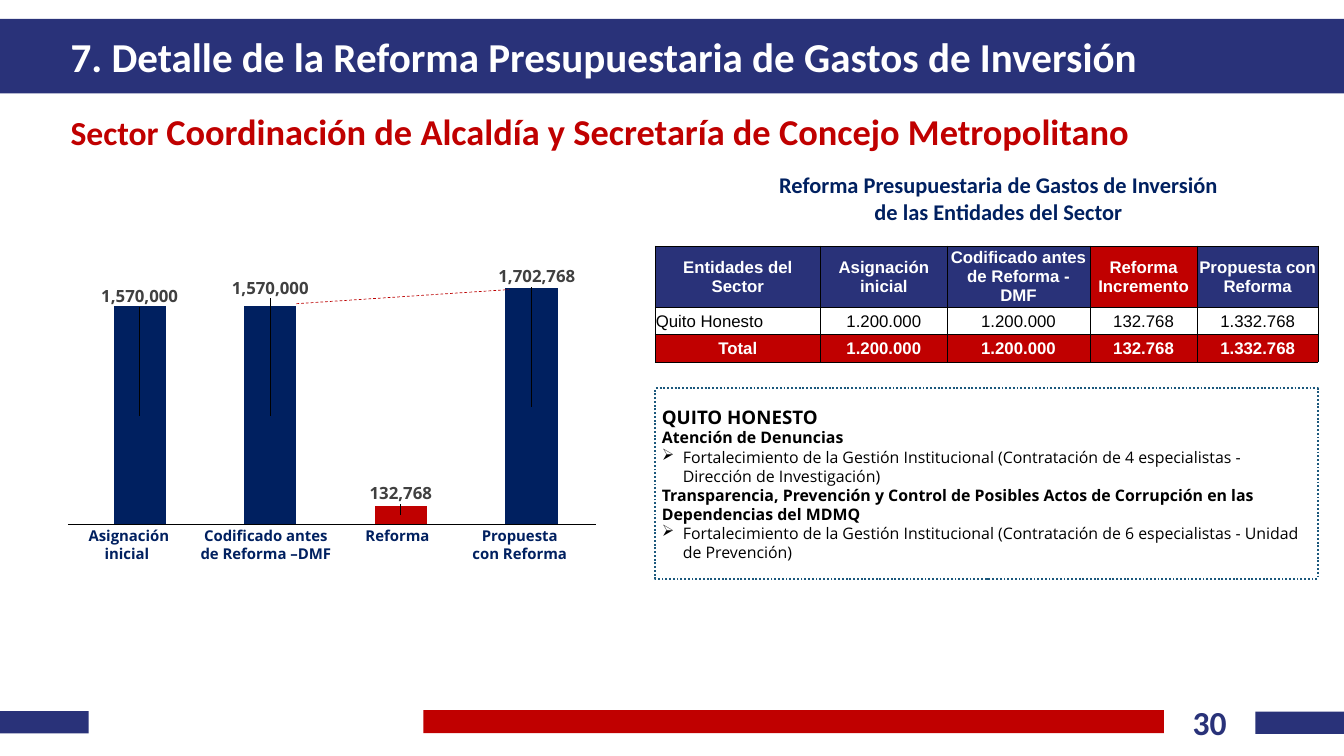
from lxml import etree
from pptx import Presentation
from pptx.chart.data import CategoryChartData
from pptx.dml.color import RGBColor
from pptx.enum.chart import XL_CHART_TYPE
from pptx.enum.dml import MSO_LINE
from pptx.enum.shapes import MSO_CONNECTOR, MSO_SHAPE
from pptx.enum.text import MSO_ANCHOR, PP_ALIGN
from pptx.oxml import parse_xml
from pptx.oxml.ns import nsdecls, qn
from pptx.util import Pt

NAVY = RGBColor(0x29, 0x32, 0x79)
DARK_BLUE = RGBColor(0x00, 0x20, 0x60)
RED = RGBColor(0xC0, 0x00, 0x00)
LINK_RED = RGBColor(0xBC, 0x00, 0x00)
TEAL = RGBColor(0x1B, 0x58, 0x7C)
GREY = RGBColor(0x40, 0x40, 0x40)
BLACK = RGBColor(0, 0, 0)
WHITE = RGBColor(0xFF, 0xFF, 0xFF)
LEFT, CENTER, JUSTIFY = PP_ALIGN.LEFT, PP_ALIGN.CENTER, PP_ALIGN.JUSTIFY
TOP, MIDDLE = MSO_ANCHOR.TOP, MSO_ANCHOR.MIDDLE
RECTANGLE, STRAIGHT = MSO_SHAPE.RECTANGLE, MSO_CONNECTOR.STRAIGHT
DASH, DOTS = MSO_LINE.DASH, MSO_LINE.ROUND_DOT


def write(para, text, size, name, color, bold=True, align=LEFT):
    para.alignment = align
    span = para.add_run()
    span.text = text
    span.font.color.rgb = color
    for key, value in {"size": Pt(size), "name": name, "bold": bold}.items():
        setattr(span.font, key, value)


def add_box(left, top, width, height, anchor=MIDDLE, side=13, edge=6.5):
    frame = page.shapes.add_textbox(Pt(left), Pt(top), Pt(width), Pt(height)).text_frame
    formats = {"word_wrap": True, "vertical_anchor": anchor,
               "margin_left": Pt(side), "margin_right": Pt(side),
               "margin_top": Pt(edge), "margin_bottom": Pt(edge)}
    for key, value in formats.items():
        setattr(frame, key, value)
    return frame


deck = Presentation()
deck.slide_width, deck.slide_height = Pt(1440), Pt(810)
page = deck.slides.add_slide(deck.slide_layouts[6])

# Title band and footer bars
for left, top, width, height, color in [
    (453.6, 761, 793.4, 24.5, RED),
    (0, 762, 95, 23.8, NAVY),
    (1345, 762.5, 95, 23.8, NAVY),
    (0, 20.2, 1440, 80, NAVY),
]:
    bar = page.shapes.add_shape(RECTANGLE, Pt(left), Pt(top), Pt(width), Pt(height))
    bar.shadow.inherit = False
    bar.fill.solid()
    bar.fill.fore_color.rgb = color
    bar.line.fill.background()

# Title, sector, page number and table heading
title = add_box(62.6, 20.2, 1278.7, 80)
write(title.paragraphs[0], "7. Detalle de la Reforma Presupuestaria de Gastos de Inversión",
      44, "Calibri", WHITE)
sector = add_box(62.6, 100, 1216.8, 81.4).paragraphs[0]
write(sector, "Sector ", 36, "Calibri", RED)
write(sector, "Coordinación de Alcaldía y Secretaría de Concejo Metropolitano", 39, "Calibri", RED)
number = add_box(1247, 748.8, 98, 51, TOP, 7.2, 3.6)
write(number.paragraphs[0], "30", 36, "Calibri", NAVY, align=CENTER)
heading = add_box(728, 182.2, 683.3, 60.5)
for index, text in enumerate(["Reforma Presupuestaria de Gastos de Inversión",
                              "de las Entidades del Sector"]):
    para = heading.add_paragraph() if index else heading.paragraphs[0]
    write(para, text, 24, "Calibri", DARK_BLUE, align=CENTER)

# Budget chart
amounts = [1570000, 1570000, 132768, 1702768]
data = CategoryChartData(number_format="#,##0")
data.categories = ["1", "2", "3", "4"]
data.add_series("Series 1", amounts)
chart = page.shapes.add_chart(XL_CHART_TYPE.COLUMN_STACKED, Pt(69.8), Pt(280),
                              Pt(581.8), Pt(291.6), data).chart
chart.has_legend = chart.has_title = False
chart.font.size, chart.font.name = Pt(10), "Open Sans"
chart.font.color.rgb = BLACK
chart.value_axis.minimum_scale, chart.value_axis.maximum_scale = 0, 1800000
chart.value_axis.has_major_gridlines = False
chart.value_axis.visible = chart.category_axis.visible = False
plot = chart.plots[0]
plot.gap_width, plot.overlap, plot.vary_by_categories = 150, 100, False
series = plot.series[0]
series.format.fill.solid()
series.format.fill.fore_color.rgb = DARK_BLUE
reform_fill = series.points[2].format.fill
reform_fill.solid()
reform_fill.fore_color.rgb = RED

# Plot area placement
area = chart._chartSpace.find(".//" + qn("c:plotArea"))
for old in area.findall(qn("c:layout")):
    area.remove(old)
area.insert(0, parse_xml(
    f'<c:layout {nsdecls("c")}><c:manualLayout><c:layoutTarget val="inner"/>'
    '<c:xMode val="edge"/><c:yMode val="edge"/><c:x val="0.017"/><c:y val="0.048"/>'
    '<c:w val="0.962"/><c:h val="0.918"/></c:manualLayout></c:layout>'))

# Value labels lifted above their columns
for index, (across, down) in enumerate([(0, -0.44), (0, -0.47), (0, -0.08), (0.01, -0.48)]):
    font = series.points[index].data_label.font
    font.size, font.bold, font.name = Pt(18), True, "Open Sans"
    font.color.rgb = GREY
for label, (across, down) in zip(series._element.iter(qn("c:dLbl")),
                                 [(0, -0.44), (0, -0.47), (0, -0.08), (0.01, -0.48)]):
    label.insert(1, parse_xml(
        f'<c:layout {nsdecls("c")}><c:manualLayout><c:x val="{across}"/>'
        f'<c:y val="{down}"/></c:manualLayout></c:layout>'))

# Column names on centred tab stops
names = add_box(87.8, 560.9, 602, 46, TOP, 7.2, 3.6)
for index, words in enumerate([
    ("Asignación", "Codificado antes", "Reforma", "Propuesta"),
    ("inicial", "de Reforma –DMF", "", "con Reforma"),
]):
    para = names.add_paragraph() if index else names.paragraphs[0]
    stops = etree.SubElement(para._p.get_or_add_pPr(), qn("a:tabLst"))
    for position in (41, 190, 331, 462):
        etree.SubElement(stops, qn("a:tab"), pos=str(Pt(position)), algn="ctr")
    write(para, "\t" + "\t".join(words), 16, "Open Sans", DARK_BLUE)

# Growth line and chart base line
for x1, y1, x2, y2, color, dash in [
    (317.5, 325.4, 545, 310.3, LINK_RED, DASH),
    (72.7, 561.6, 638.6, 561.6, BLACK, None),
]:
    line = page.shapes.add_connector(STRAIGHT, Pt(x1), Pt(y1), Pt(x2), Pt(y2))
    line.line.color.rgb = color
    line.line.width = Pt(0.75)
    if dash:
        line.line.dash_style = dash
    etree.SubElement(line._element.spPr, qn("a:effectLst"))

# Table of entities
rows = [
    ["Entidades del Sector", "Asignación inicial", "Codificado antes de Reforma - DMF",
     "Reforma Incremento", "Propuesta con Reforma"],
    ["Quito Honesto", "1.200.000", "1.200.000", "132.768", "1.332.768"],
    ["Total", "1.200.000", "1.200.000", "132.768", "1.332.768"],
]
table = page.shapes.add_table(3, 5, Pt(702), Pt(263.5), Pt(710), Pt(124)).table
for column, width in zip(table.columns, (177, 136, 152.6, 115.4, 129)):
    column.width = Pt(width)
for row, height in zip(table.rows, (65, 29.5, 29.5)):
    row.height = Pt(height)
for r, texts in enumerate(rows):
    for c, text in enumerate(texts):
        cell = table.cell(r, c)
        for key, value in {"vertical_anchor": MIDDLE, "margin_left": Pt(0.7),
                           "margin_right": Pt(0.7), "margin_top": Pt(0.7),
                           "margin_bottom": 0}.items():
            setattr(cell, key, value)
        if r == 1:
            cell.fill.background()
        else:
            cell.fill.solid()
            cell.fill.fore_color.rgb = RED if r == 2 or c == 3 else NAVY
        write(cell.text_frame.paragraphs[0], text, 18, "Arial", BLACK if r == 1 else WHITE,
              r != 1, LEFT if (r, c) == (1, 0) else CENTER)
        for place, side in enumerate("LRTB"):
            cell._tc.get_or_add_tcPr().insert(place, parse_xml(
                f'<a:ln{side} {nsdecls("a")} w="{Pt(0.5)}"><a:solidFill>'
                f'<a:srgbClr val="{BLACK}"/></a:solidFill></a:ln{side}>'))

# Detail panel
panel = page.shapes.add_shape(RECTANGLE, Pt(702), Pt(416.2), Pt(710), Pt(203.8))
panel.shadow.inherit = False
panel.fill.background()
panel.line.color.rgb = TEAL
panel.line.width, panel.line.dash_style = Pt(2), DOTS
frame = panel.text_frame
frame.word_wrap, frame.vertical_anchor = True, MIDDLE
for index, (text, size, bullet, align) in enumerate([
    ("QUITO HONESTO", 20, False, JUSTIFY),
    ("Atención de Denuncias", 17, False, JUSTIFY),
    ("Fortalecimiento de la Gestión Institucional (Contratación de 4 especialistas - "
     "Dirección de Investigación)", 17, True, LEFT),
    ("Transparencia, Prevención y Control de Posibles Actos de Corrupción en las "
     "Dependencias del MDMQ", 17, False, LEFT),
    ("Fortalecimiento de la Gestión Institucional (Contratación de 6 especialistas - "
     "Unidad de Prevención)", 17, True, LEFT),
]):
    para = frame.add_paragraph() if index else frame.paragraphs[0]
    if bullet:
        props = para._p.get_or_add_pPr()
        props.set("marL", str(Pt(22.5)))
        props.set("indent", str(Pt(-22.5)))
        etree.SubElement(props, qn("a:buChar"), char="➢")
    write(para, text, size, "Open Sans", BLACK, not bullet, align)

deck.save("out.pptx")
